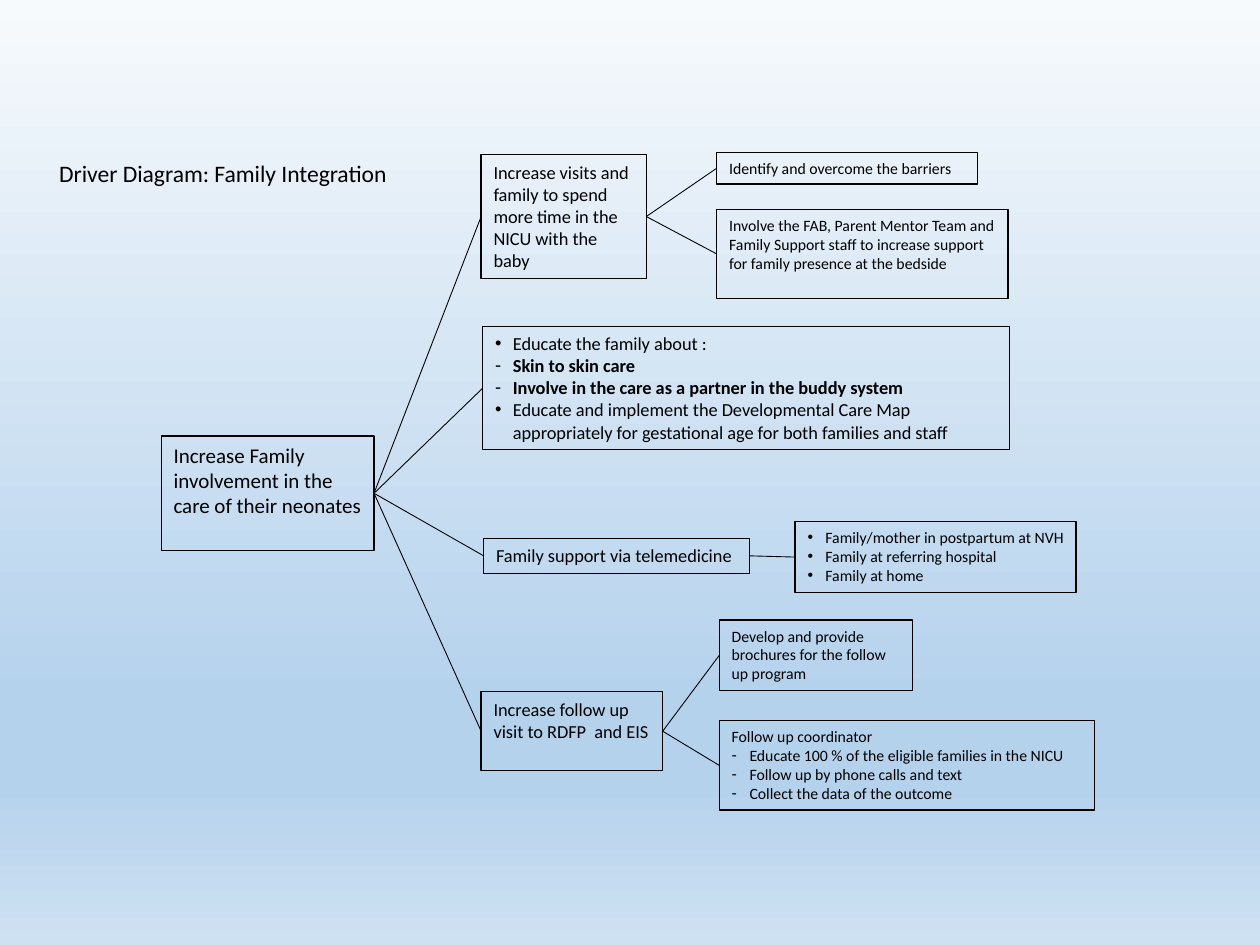
from dataclasses import dataclass

from lxml import etree
from pptx import Presentation
from pptx.dml.color import RGBColor
from pptx.enum.shapes import MSO_CONNECTOR, MSO_SHAPE
from pptx.enum.text import MSO_ANCHOR, MSO_AUTO_SIZE, PP_ALIGN
from pptx.oxml.ns import qn
from pptx.util import Cm, Pt

RECTANGLE = MSO_SHAPE.RECTANGLE
STRAIGHT = MSO_CONNECTOR.STRAIGHT
TOP = MSO_ANCHOR.TOP
LEFT = PP_ALIGN.LEFT
NO_AUTOFIT = MSO_AUTO_SIZE.NONE
LEFT_SIDE, RIGHT_SIDE = 1, 3
TITLE_ONLY = 5


@dataclass(frozen=True)
class Theme:
    font: str = "Calibri"
    ink: RGBColor = RGBColor(0, 0, 0)
    title_size: float = 13.5
    aim_size: float = 12
    driver_size: float = 10.5
    action_size: float = 9
    box_line: float = 0.75
    link_line: float = 0.5
    bullet_indent: float = 0.36
    sky: tuple = ((0, "F7FAFD"), (74, "B5D2EC"), (83, "B5D2EC"), (100, "CEE1F2"))


class DriverDiagram:
    def __init__(self, slide, theme):
        self.slide = slide
        self.theme = theme

    def background(self):
        fill = self.slide.background.fill
        fill.gradient()
        fill.gradient_angle = 270
        stops = self.slide.element.find(".//" + qn("a:gsLst"))
        for stop in list(stops):
            stops.remove(stop)
        for percent, colour in self.theme.sky:
            stop = etree.SubElement(stops, qn("a:gs"), pos=str(percent * 1000))
            etree.SubElement(stop, qn("a:srgbClr"), val=colour)

    def title(self, text, left, top, width, height):
        title = self.slide.shapes.title
        title.left, title.top = Cm(left), Cm(top)
        title.width, title.height = Cm(width), Cm(height)
        self._write(title.text_frame, [text], self.theme.title_size, wrap=False)

    def box(self, place, size, *lines, wrap=True):
        shape = self.slide.shapes.add_shape(RECTANGLE, *map(Cm, place))
        shape.shadow.inherit = False
        shape.fill.background()
        shape.line.color.rgb = self.theme.ink
        shape.line.width = Pt(self.theme.box_line)
        self._write(shape.text_frame, lines, size, wrap)
        return shape

    def link(self, source, *targets):
        """Join the right side of source to the left side of each target."""
        for target in targets:
            line = self.slide.shapes.add_connector(STRAIGHT, 0, 0, 0, 0)
            line.begin_connect(source, RIGHT_SIDE)
            line.end_connect(target, LEFT_SIDE)
            line.line.color.rgb = self.theme.ink
            line.line.width = Pt(self.theme.link_line)
            etree.SubElement(line.element.spPr, qn("a:effectLst"))

    def _write(self, frame, lines, size, wrap):
        """Write lines; one is a string or a (bullet, text[, bold]) tuple."""
        frame.word_wrap = wrap
        frame.auto_size = NO_AUTOFIT
        frame.vertical_anchor = TOP
        for number, line in enumerate(lines):
            bullet, text, *bold = (None, line) if isinstance(line, str) else line
            paragraph = frame.add_paragraph() if number else frame.paragraphs[0]
            paragraph.text = text
            paragraph.alignment = LEFT
            if bullet:
                self._bullet(paragraph, bullet)
            for run in paragraph.runs:
                run.font.name = self.theme.font
                run.font.size = Pt(size)
                run.font.bold = any(bold)
                run.font.color.rgb = self.theme.ink

    def _bullet(self, paragraph, character):
        properties = paragraph._p.get_or_add_pPr()
        indent = Cm(self.theme.bullet_indent)
        properties.set("marL", str(indent))
        properties.set("indent", str(-indent))
        etree.SubElement(properties, qn("a:buFont"), typeface="Arial")
        etree.SubElement(properties, qn("a:buChar"), char=character)


def main():
    presentation = Presentation()
    presentation.slide_width, presentation.slide_height = Cm(25.4), Cm(19.05)
    slide = presentation.slides.add_slide(presentation.slide_layouts[TITLE_ONLY])
    theme = Theme()
    diagram = DriverDiagram(slide, theme)
    diagram.background()
    diagram.title("Driver Diagram: Family Integration", 0.94, 3.07, 7.21, 0.84)

    aim = diagram.box(
        (3.25, 8.79, 4.29, 2.31), theme.aim_size,
        "Increase Family involvement in the care of their neonates")

    visits = diagram.box(
        (9.7, 3.12, 3.33, 2.49), theme.driver_size,
        "Increase visits and family to spend more time in the NICU with the baby")
    education = diagram.box(
        (9.73, 6.58, 10.62, 2.49), theme.driver_size,
        ("•", "Educate the family about :"),
        ("-", "Skin to skin care", True),
        ("-", "Involve in the care as a partner in the buddy system", True),
        ("•", "Educate and implement the Developmental Care Map appropriately "
              "for gestational age for both families and staff"))
    telemedicine = diagram.box(
        (9.75, 10.85, 5.36, 0.71), theme.driver_size,
        "Family support via telemedicine", wrap=False)
    follow_up = diagram.box(
        (9.7, 13.94, 3.66, 1.6), theme.driver_size,
        "Increase follow up visit to RDFP  and EIS")

    barriers = diagram.box(
        (14.45, 3.07, 5.26, 0.64), theme.action_size,
        "Identify and overcome the barriers")
    mentors = diagram.box(
        (14.45, 4.22, 5.87, 1.8), theme.action_size,
        "Involve the FAB, Parent Mentor Team and Family Support staff to "
        "increase support for family presence at the bedside")
    locations = diagram.box(
        (16.03, 10.52, 5.66, 1.42), theme.action_size,
        ("•", "Family/mother in postpartum at NVH"),
        ("•", "Family at referring hospital"),
        ("•", "Family at home"), wrap=False)
    brochures = diagram.box(
        (14.5, 12.5, 3.89, 1.42), theme.action_size,
        "Develop and provide brochures for the follow up program")
    coordinator = diagram.box(
        (14.5, 14.53, 7.57, 1.8), theme.action_size,
        "Follow up coordinator",
        ("-", "Educate 100 % of the eligible families in the NICU"),
        ("-", "Follow up by phone calls and text"),
        ("-", "Collect the data of the outcome"))

    diagram.link(aim, visits, education, telemedicine, follow_up)
    diagram.link(visits, barriers, mentors)
    diagram.link(telemedicine, locations)
    diagram.link(follow_up, brochures, coordinator)
    presentation.save("out.pptx")


if __name__ == "__main__":
    main()
